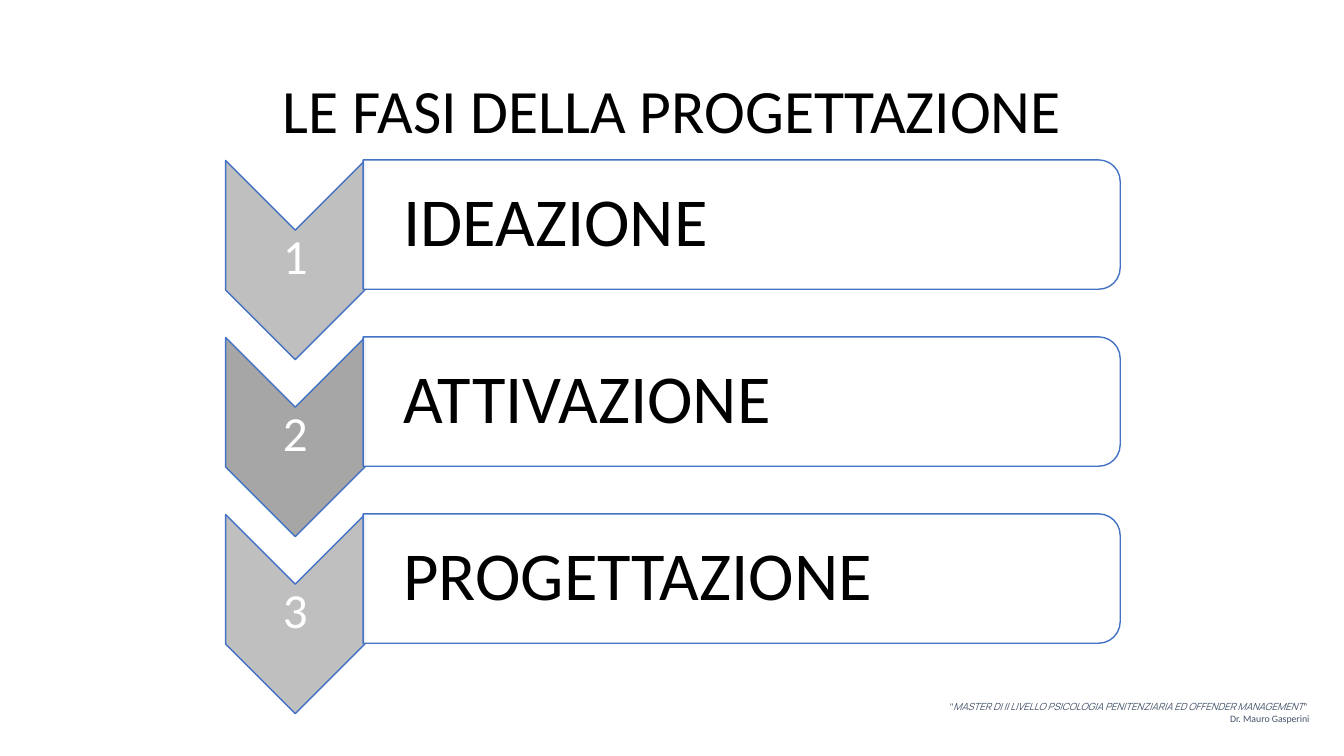
from dataclasses import dataclass

from lxml.etree import SubElement
from pptx import Presentation
from pptx.dml.color import RGBColor
from pptx.enum.shapes import MSO_SHAPE as Preset
from pptx.enum.text import MSO_ANCHOR as Anchor, PP_ALIGN as Align
from pptx.oxml.ns import qn
from pptx.util import Cm, Pt


@dataclass(frozen=True)
class Theme:
    font: str = "Calibri"
    course_font: str = "Manrope"
    ink: str = "000000"
    white: str = "FFFFFF"
    outline: str = "4472C4"
    light_grey: str = "BFBFBF"
    dark_grey: str = "A6A6A6"
    credit: str = "44546A"
    title_size: int = 44
    phase_size: int = 49
    number_size: int = 35
    credit_size: int = 7


THEME = Theme()
PHASES = [
    ("IDEAZIONE", THEME.light_grey),
    ("ATTIVAZIONE", THEME.dark_grey),
    ("PROGETTAZIONE", THEME.light_grey),
]
PHASE_STEP = 4.46
COURSE = "MASTER DI II LIVELLO PSICOLOGIA PENITENZIARIA ED OFFENDER MANAGEMENT"


def box(left, top, width, height):
    return Cm(left), Cm(top), Cm(width), Cm(height)


def format_paragraph(paragraph, size, color, align, line_spacing=0.9):
    paragraph.alignment = align
    paragraph.line_spacing = line_spacing
    paragraph.font.name = THEME.font
    paragraph.font.size = Pt(size)
    paragraph.font.color.rgb = RGBColor.from_string(color)


def add_title(slide, text):
    title = slide.shapes.title
    title.left, title.top, title.width, title.height = box(2.34, 1.02, 29.21, 3.68)
    title.text_frame.text = text
    title.text_frame.vertical_anchor = Anchor.MIDDLE
    format_paragraph(title.text_frame.paragraphs[0], THEME.title_size, THEME.ink, Align.CENTER)


def add_turned_shape(slide, preset, place, color):
    shape = slide.shapes.add_shape(preset, *place)
    shape.rotation = 90
    shape.shadow.inherit = False
    shape.fill.solid()
    shape.fill.fore_color.rgb = RGBColor.from_string(color)
    shape.line.color.rgb = RGBColor.from_string(THEME.outline)
    shape.line.width = Pt(1)
    return shape


def set_opacity(shape, percent):
    color = shape.fill._xPr.find(qn("a:solidFill"))[0]
    SubElement(color, qn("a:alpha")).set("val", str(percent * 1000))


def add_label(slide, place, text, size, color, align, inset, left_inset):
    label = slide.shapes.add_textbox(*place)
    frame = label.text_frame
    frame.word_wrap = True
    frame.vertical_anchor = Anchor.MIDDLE
    frame.margin_left = Cm(left_inset)
    frame.margin_top = frame.margin_right = frame.margin_bottom = Cm(inset)
    frame.text = text
    format_paragraph(frame.paragraphs[0], size, color, align)


def add_phase(slide, index, name, color):
    drop = index * PHASE_STEP
    add_turned_shape(slide, Preset.CHEVRON, box(4.93, 4.8 + drop, 5.02, 3.51), color)
    add_label(slide, box(5.69, 5.77 + drop, 3.51, 1.5), str(index + 1),
              THEME.number_size, THEME.white, Align.CENTER, 0.05, 0.05)
    panel = add_turned_shape(slide, Preset.ROUND_2_SAME_RECTANGLE,
                             box(17.06, -3.88 + drop, 3.26, 19.08), THEME.white)
    set_opacity(panel, 90)
    add_label(slide, box(9.2, 4.19 + drop, 18.92, 2.92), name,
              THEME.phase_size, THEME.ink, Align.LEFT, 0.08, 0.97)


def add_credit(slide, course, lecturer):
    frame = slide.shapes.add_textbox(*box(1.98, 17.53, 31.27, 0.89)).text_frame
    frame.word_wrap = True
    course_line = frame.paragraphs[0]
    lecturer_line = frame.add_paragraph()
    for line in (course_line, lecturer_line):
        format_paragraph(line, THEME.credit_size, THEME.credit, Align.RIGHT, 1.0)
    course_line.add_run().text = '"'
    course_name = course_line.add_run()
    course_name.text = course
    course_name.font.name = THEME.course_font
    course_name.font.italic = True
    course_line.add_run().text = '" '
    lecturer_line.add_run().text = lecturer


def main():
    deck = Presentation()
    deck.slide_width, deck.slide_height = Cm(33.87), Cm(19.05)
    slide = deck.slides.add_slide(deck.slide_layouts[5])
    add_title(slide, "LE FASI DELLA PROGETTAZIONE")
    for index, (name, color) in enumerate(PHASES):
        add_phase(slide, index, name, color)
    add_credit(slide, COURSE, "Dr. Mauro Gasperini")
    deck.save("out.pptx")


if __name__ == "__main__":
    main()
